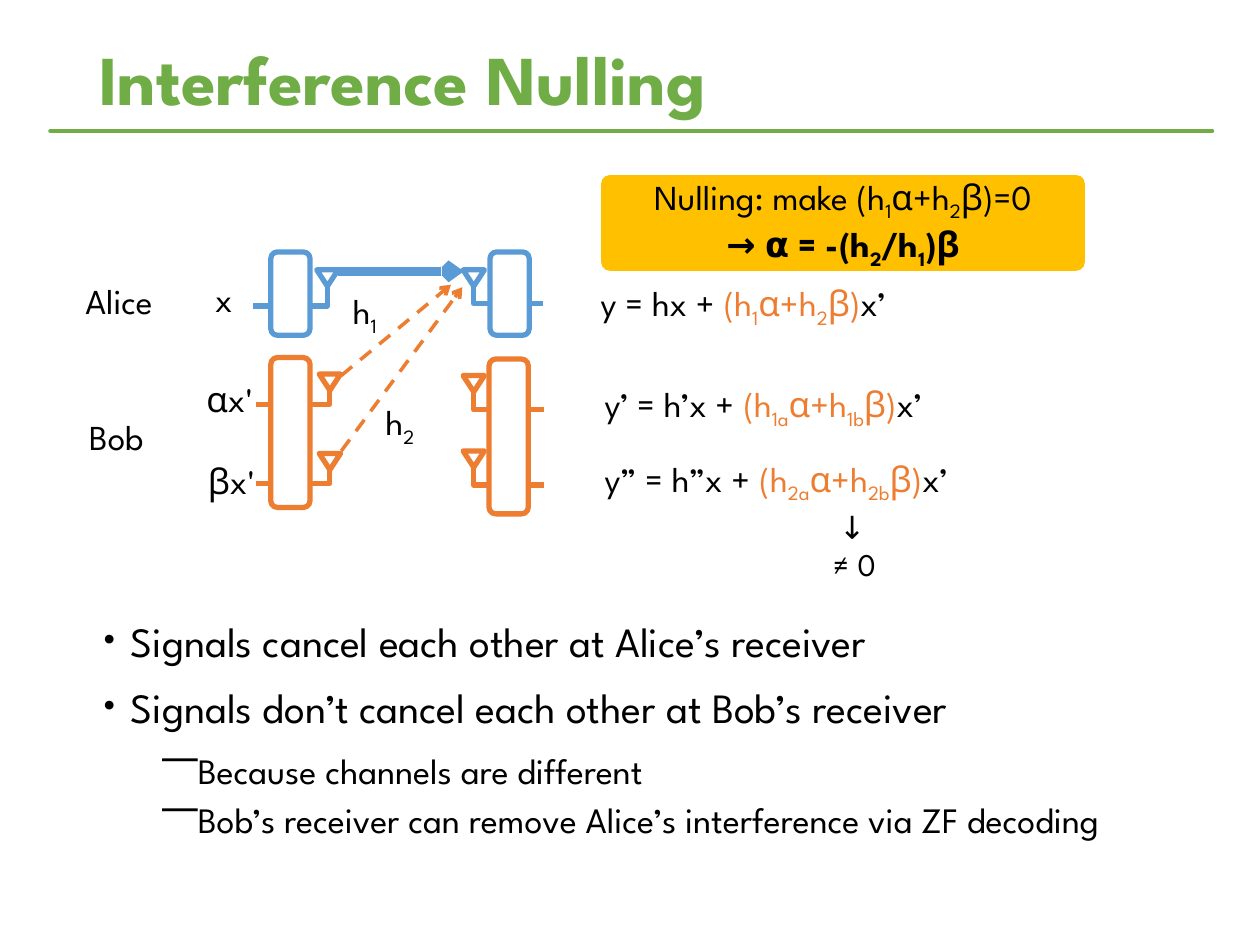
from dataclasses import dataclass

from lxml.etree import SubElement
from pptx import Presentation
from pptx.dml.color import RGBColor
from pptx.enum.dml import MSO_LINE
from pptx.enum.shapes import MSO_CONNECTOR, MSO_SHAPE
from pptx.enum.text import MSO_ANCHOR, PP_ALIGN
from pptx.oxml.ns import qn
from pptx.util import Cm, Pt


@dataclass(frozen=True)
class Theme:
    """Colours, font and point sizes of the slide."""
    font: str = "League Spartan"
    text: str = "000000"
    paper: str = "FFFFFF"
    title: str = "70AD47"
    alice: str = "5B9BD5"
    bob: str = "ED7D31"
    callout: str = "FFC000"
    title_size: float = 40
    point_size: float = 23.8
    detail_size: float = 20.4
    label_size: float = 20
    note_size: float = 18
    rule_width: float = 2.75
    outline_width: float = 3
    signal_width: float = 5
    channel_width: float = 2


T = Theme()


def add_runs(p, runs, size=T.label_size, color=T.text, bold=False):
    """Add runs given as (text, subscript) pairs to a paragraph."""
    for text, sub in runs:
        r = p.add_run()
        r.text = text
        r.font.name = T.font
        r.font.size = Pt(size)
        r.font.bold = bold
        r.font.color.rgb = RGBColor.from_string(color)
        if sub:
            r.font._element.set("baseline", "-25000")


def combined(first, second):
    """Return the runs of a two-channel sum up to its closing bracket."""
    return [("(h", False), (first, True), ("α+h", False), (second, True), ("β)", False)]


def add_text(s, x, y, w, h, runs=(), wrap=True, **style):
    """Add a text box and return it."""
    sp = s.shapes.add_textbox(Cm(x), Cm(y), Cm(w), Cm(h))
    tf = sp.text_frame
    tf.word_wrap = wrap
    add_runs(tf.paragraphs[0], runs, **style)
    return sp


def add_box(s, kind, x, y, w, h, fill, line=None):
    """Add a filled preset shape with an optional outline."""
    sp = s.shapes.add_shape(kind, Cm(x), Cm(y), Cm(w), Cm(h))
    sp.shadow.inherit = False
    sp.fill.solid()
    sp.fill.fore_color.rgb = RGBColor.from_string(fill)
    if line:
        sp.line.color.rgb = RGBColor.from_string(line)
        sp.line.width = Pt(T.outline_width)
    else:
        sp.line.fill.background()
    return sp


def add_line(s, x1, y1, x2, y2, color, width, kind=MSO_CONNECTOR.STRAIGHT):
    """Add a connector without a shadow and return it."""
    sp = s.shapes.add_connector(kind, Cm(x1), Cm(y1), Cm(x2), Cm(y2))
    sp.line.color.rgb = RGBColor.from_string(color)
    sp.line.width = Pt(width)
    SubElement(sp._element.spPr, qn("a:effectLst"))
    return sp


def add_arrow(s, x1, y1, x2, y2, color, width, head="med", dashed=False):
    """Add a straight connector with an arrowhead at its end."""
    sp = add_line(s, x1, y1, x2, y2, color, width)
    if dashed:
        sp.line.dash_style = MSO_LINE.DASH
    SubElement(sp.line._get_or_add_ln(), qn("a:tailEnd"), type="arrow", w=head, len=head)


def add_antenna(s, wire_x, wire_y, x, top, color):
    """Add an antenna centred on x with its wire bending down to the radio."""
    w, h = 0.43, 0.33
    wire = add_line(s, wire_x, wire_y, x, top + h, color, T.outline_width, MSO_CONNECTOR.ELBOW)
    wire._element.spPr.find(qn("a:prstGeom")).set("prst", "bentConnector2")
    sp = add_box(s, MSO_SHAPE.ISOSCELES_TRIANGLE, x - w / 2, top, w, h, T.paper, color)
    sp.rotation = 180


def add_radio(s, x, y, h, color, wire_x, antenna_x, antennas):
    """Add a radio over the wires of its antennas, given as (top, wire y)."""
    for top, wire_y in antennas:
        add_antenna(s, wire_x, wire_y, antenna_x, top, color)
    add_box(s, MSO_SHAPE.ROUNDED_RECTANGLE, x, y, 0.79, h, T.paper, color)


def add_equation(s, x, y, left, first, second):
    """Add a received-signal equation with its interference term coloured."""
    sp = add_text(s, x, y, 8.64, 1.12, [(left, False)])
    p = sp.text_frame.paragraphs[0]
    add_runs(p, combined(first, second), color=T.bob)
    add_runs(p, [("x’", False)])


def add_callout(s):
    """Add the nulling condition on its coloured panel."""
    sp = add_box(s, MSO_SHAPE.ROUNDED_RECTANGLE, 12.12, 3.53, 9.75, 1.93, T.callout)
    sp.adjustments[0] = 0.09
    tf = sp.text_frame
    tf.word_wrap = True
    tf.vertical_anchor = MSO_ANCHOR.MIDDLE
    tf.margin_top = tf.margin_bottom = Cm(0)
    condition, solution = tf.paragraphs[0], tf.add_paragraph()
    condition.alignment = solution.alignment = PP_ALIGN.CENTER
    add_runs(condition, [("Nulling: make ", False), *combined("1", "2"), ("=0", False)])
    add_runs(solution, [("→ α = -(h", False), ("2", True), ("/h", False),
                        ("1", True), (")β", False)], bold=True)


def add_bullet(p, text, char, size, margin, after):
    """Fill a paragraph as a bulleted line."""
    p.line_spacing = 0.9
    p.space_before, p.space_after = Pt(6), Pt(after)
    pPr = p._p.get_or_add_pPr()
    pPr.set("marL", str(Cm(margin)))
    pPr.set("indent", str(-Cm(0.64)))
    SubElement(pPr, qn("a:buFont"), typeface=T.font)
    SubElement(pPr, qn("a:buChar"), char=char)
    add_runs(p, [(text, False)], size=size)


def add_points(s):
    """Add the two conclusions and their details."""
    tf = add_text(s, 1.75, 12.4, 22.15, 5.69).text_frame
    point = ("•", T.point_size, 0.64, 6)
    detail = ("⎻", T.detail_size, 1.91, 0)
    lines = [
        ("Signals cancel each other at Alice’s receiver", point),
        ("Signals don’t cancel each other at Bob’s receiver", point),
        ("Because channels are different", detail),
        ("Bob’s receiver can remove Alice’s interference via ZF decoding", detail),
    ]
    for i, (text, style) in enumerate(lines):
        p = tf.add_paragraph() if i else tf.paragraphs[0]
        add_bullet(p, text, *style)


def main():
    """Build and save the slide."""
    prs = Presentation()
    prs.slide_width, prs.slide_height = Cm(25.4), Cm(19.05)
    s = prs.slides.add_slide(prs.slide_layouts[6])

    rule = add_line(s, 1.02, 2.64, 24.43, 2.64, T.title, T.rule_width)
    rule.line._get_or_add_ln().set("cap", "rnd")
    title = add_text(s, 1.75, 0.74, 21.89, 1.88, [("Interference Nulling", False)],
                     size=T.title_size, color=T.title, bold=True)
    title.text_frame.vertical_anchor = MSO_ANCHOR.MIDDLE
    title.text_frame.paragraphs[0].line_spacing = 0.9
    add_points(s)

    add_radio(s, 9.86, 7.24, 3.12, T.bob, 10.97, 9.55, [(7.57, 8.26), (9.09, 9.78)])
    add_radio(s, 5.46, 7.21, 3.02, T.bob, 5.16, 6.65, [(7.54, 8.15), (9.14, 9.75)])
    add_radio(s, 5.46, 5.08, 1.68, T.alice, 5.11, 6.6, [(5.44, 6.17)])
    add_radio(s, 9.88, 5.08, 1.68, T.alice, 10.95, 9.55, [(5.44, 6.12)])
    add_arrow(s, 6.81, 5.47, 9.35, 5.47, T.alice, T.signal_width, head="sm")
    add_arrow(s, 6.88, 7.57, 9.09, 5.74, T.bob, T.channel_width, dashed=True)
    add_arrow(s, 6.88, 9.09, 9.32, 5.79, T.bob, T.channel_width, dashed=True)

    for text, x, y, w, wrap in [("Alice", 1.47, 5.51, 2.26, False), ("Bob", 1.55, 8.26, 1.88, False),
                                ("x", 4.09, 5.46, 1.02, True), ("αx'", 3.91, 7.49, 1.57, True),
                                ("βx'", 3.94, 9.14, 1.88, True)]:
        add_text(s, x, y, w, 1.12, [(text, False)], wrap)
    for index, x, y in [("1", 6.86, 5.72), ("2", 7.52, 7.95)]:
        add_text(s, x, y, 1.88, 1.12, [("h", False), (index, True)])

    add_callout(s)
    add_equation(s, 11.86, 5.56, "y = hx + ", "1", "2")
    add_equation(s, 11.94, 7.59, "y’ = h’x + ", "1a", "1b")
    add_equation(s, 11.94, 9.09, "y” = h”x + ", "2a", "2b")
    arrow = add_text(s, 16.66, 10.19, 1.14, 1.02, [("→", False)], False, size=T.note_size)
    arrow.rotation = 90
    add_text(s, 16.54, 10.87, 1.4, 1.02, [("≠ 0", False)], False, size=T.note_size)
    prs.save("out.pptx")


if __name__ == "__main__":
    main()
